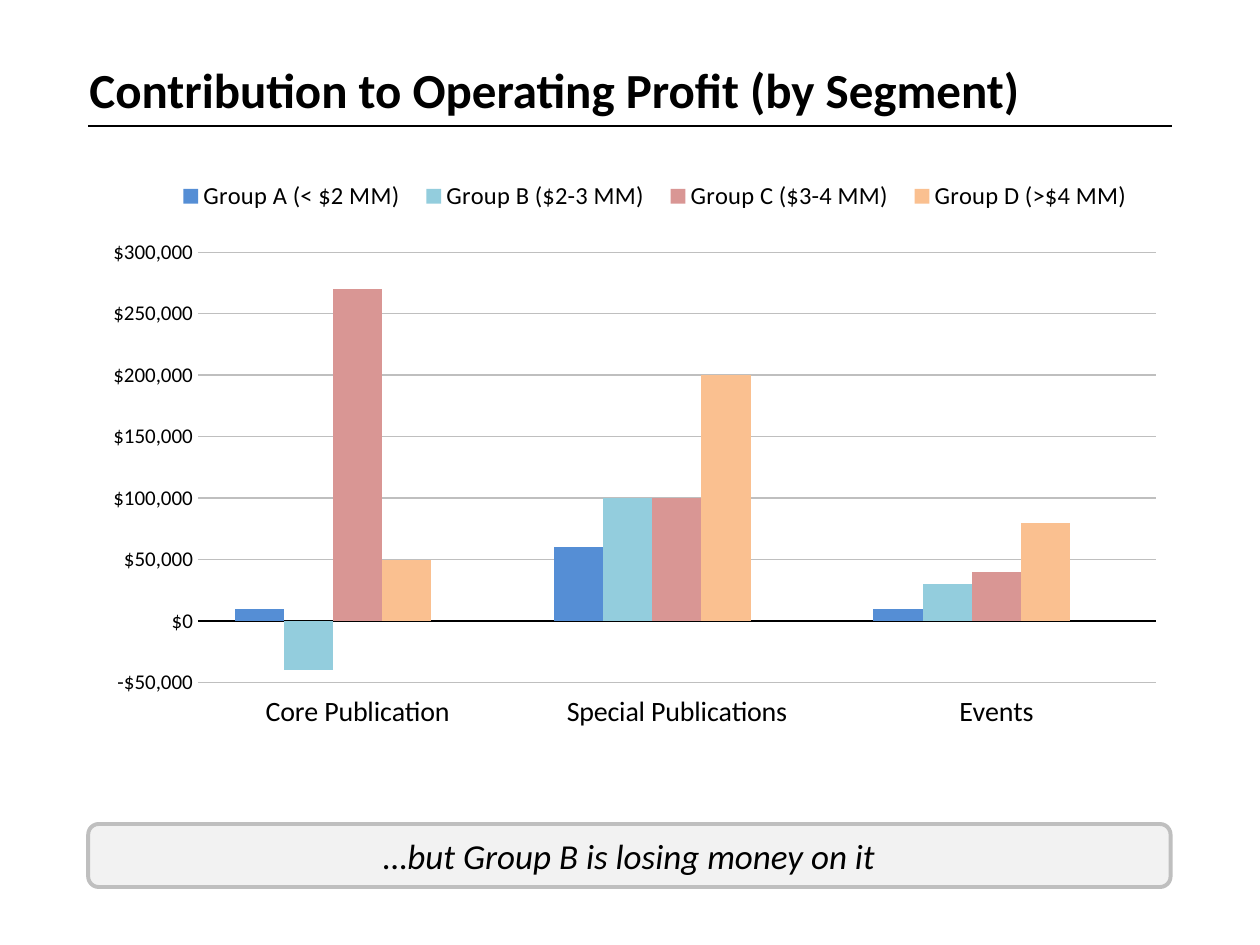
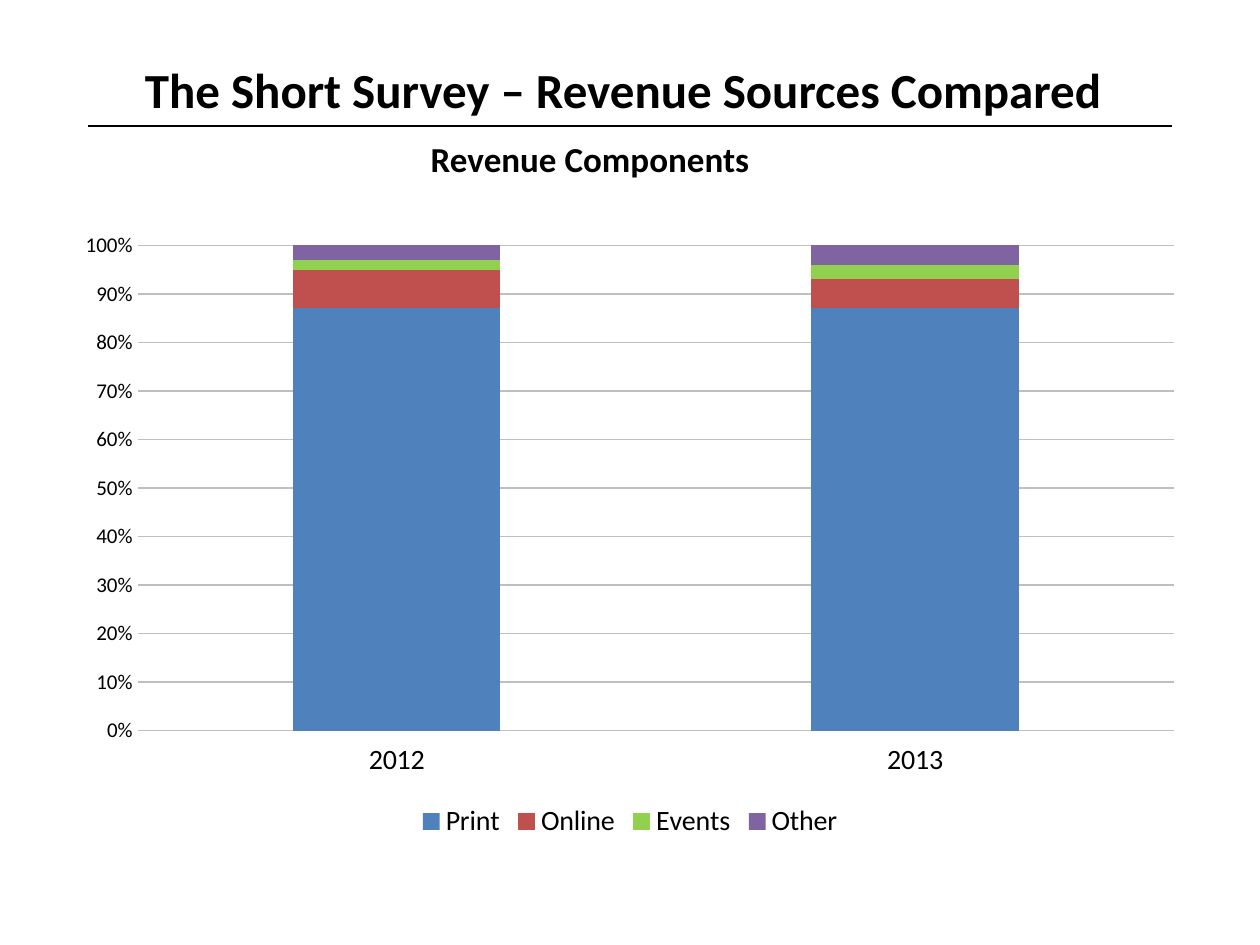
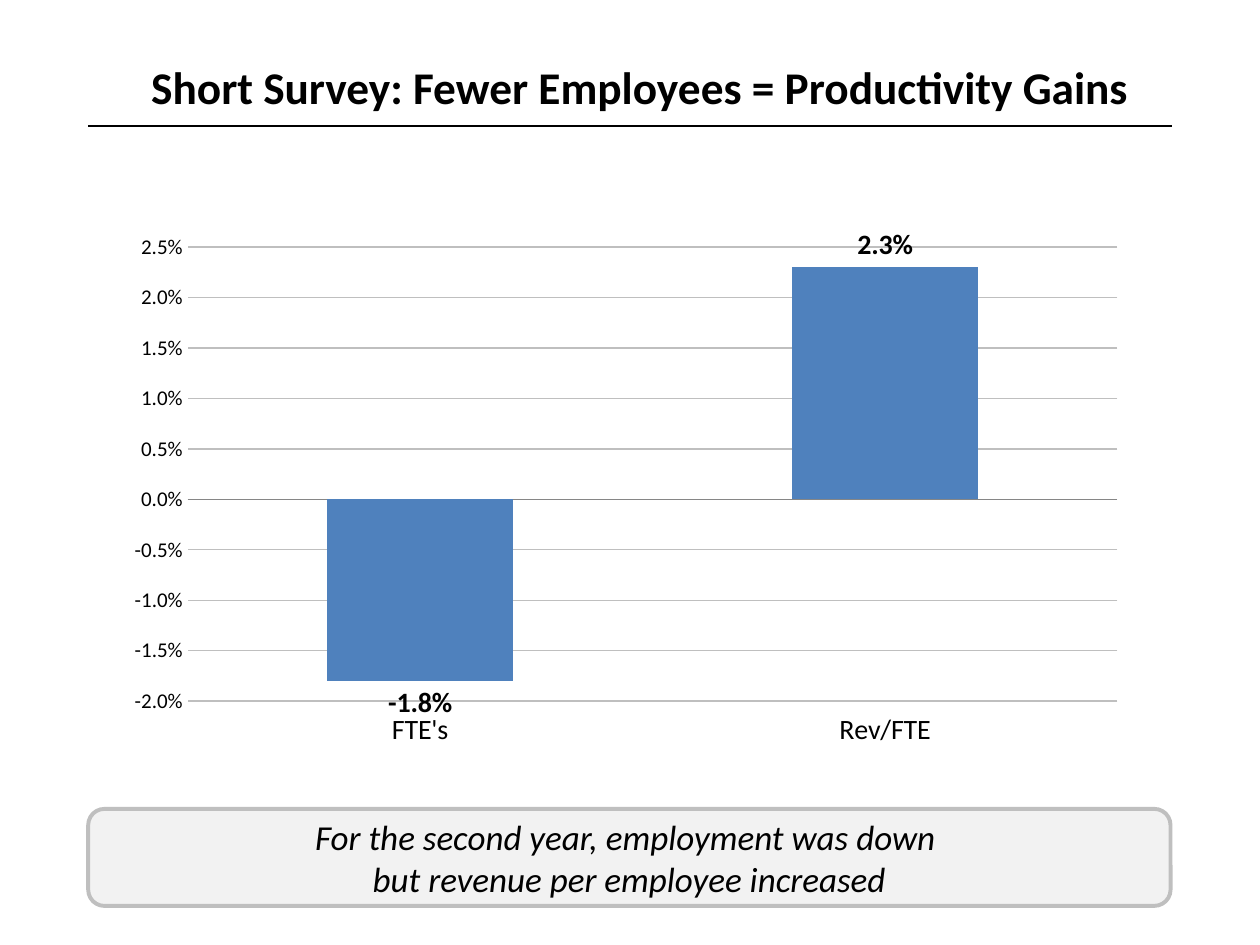
import lxml.etree
import pptx
import pptx.chart.data
import pptx.dml.color
import pptx.enum.chart
import pptx.enum.shapes
import pptx.enum.text
import pptx.oxml.ns
import pptx.util

Inches, Pt = pptx.util.Inches, pptx.util.Pt
KIND = pptx.enum.chart.XL_CHART_TYPE
TICK = pptx.enum.chart.XL_TICK_MARK
ALIGN = pptx.enum.text.PP_ALIGN
ANCHOR = pptx.enum.text.MSO_ANCHOR
qn = pptx.oxml.ns.qn

FONT, BLACK, GREY, PALE, BLUE = "Calibri", "000000", "BFBFBF", "F2F2F2", "4F81BD"


def rgb(code):
    return pptx.dml.color.RGBColor.from_string(code)


def apply(item, values):
    """Set each named attribute of item."""
    for name, value in values.items():
        setattr(item, name, value)


def ink(line, color, width):
    line.color.rgb = rgb(color)
    line.width = Pt(width)


def style(font, size, **more):
    apply(font, dict(name=FONT, size=Pt(size), **more))
    font.color.rgb = rgb(BLACK)


def place(parent, spot, box, inner=False):
    """Give a chart part a manual layout, in fractions of the chart."""
    for old in parent.findall(qn("c:layout")):
        parent.remove(old)
    layout = lxml.etree.Element(qn("c:layout"))
    manual = lxml.etree.SubElement(layout, qn("c:manualLayout"))
    rules = [("layoutTarget", "inner")] if inner else []
    rules += [("xMode", "edge"), ("yMode", "edge"), *zip("xywh", box)]
    for tag, value in rules:
        lxml.etree.SubElement(manual, qn("c:" + tag), val=str(value))
    parent.insert(spot, layout)


class Deck:
    """Holds the shared style and the current slide."""

    def __init__(self):
        self.show = pptx.Presentation()
        apply(self.show, dict(slide_width=Inches(10), slide_height=Inches(7.5)))

    def start(self, title, left, width, size=28):
        """Begin a slide with its title and the rule below it."""
        self.slide = self.show.slides.add_slide(self.show.slide_layouts[5])
        self.shapes = self.slide.shapes
        head = self.shapes.title
        apply(head, dict(left=Inches(left), top=Inches(0.42),
                         width=Inches(width), height=Inches(0.58)))
        self.fill_text(head, title, size, ALIGN.LEFT, ANCHOR.TOP, bold=True)
        rule = self.shapes.add_connector(
            pptx.enum.shapes.MSO_CONNECTOR.STRAIGHT,
            Inches(0.7), Inches(1), Inches(9.3), Inches(1))
        ink(rule.line, BLACK, 0.75)
        lxml.etree.SubElement(rule.element.spPr, qn("a:effectLst"))

    def fill_text(self, shape, text, size, align, anchor, **more):
        frame = shape.text_frame
        frame.text = text
        apply(frame, dict(word_wrap=True, vertical_anchor=anchor,
                          auto_size=pptx.enum.text.MSO_AUTO_SIZE.NONE))
        for para in frame.paragraphs:
            para.alignment = align
            for run in para.runs:
                style(run.font, size, **more)

    def label(self, text, box):
        shape = self.shapes.add_textbox(*map(Inches, box))
        self.fill_text(shape, text, 20, ALIGN.LEFT, ANCHOR.TOP, bold=True)

    def callout(self, text, top, height):
        shape = self.shapes.add_shape(
            pptx.enum.shapes.MSO_SHAPE.ROUNDED_RECTANGLE,
            Inches(0.7), Inches(top), Inches(8.59), Inches(height))
        shape.shadow.inherit = False
        shape.fill.solid()
        shape.fill.fore_color.rgb = rgb(PALE)
        ink(shape.line, GREY, 2.25)
        self.fill_text(shape, text, 20, ALIGN.CENTER, ANCHOR.MIDDLE, italic=True)

    def chart(self, kind, box, cats, series, form, scale, plot=None):
        """Add a column chart; each series is a name, values and colour."""
        data = pptx.chart.data.CategoryChartData()
        data.categories = cats
        for name, values, color in series:
            data.add_series(name, values)
        chart = self.shapes.add_chart(kind, *map(Inches, box), data).chart
        apply(chart, dict(has_title=False, has_legend=False))
        style(chart.font, 18)
        bars = chart.plots[0]
        apply(bars, dict(gap_width=150, vary_by_categories=False))
        for bar, (name, values, color) in zip(bars.series, series):
            bar.format.fill.solid()
            bar.format.fill.fore_color.rgb = rgb(color)
        for axis, size in ((chart.category_axis, 16), (chart.value_axis, 12)):
            apply(axis, dict(major_tick_mark=TICK.NONE, minor_tick_mark=TICK.NONE))
            style(axis.tick_labels.font, size)
        chart.category_axis.tick_label_position = pptx.enum.chart.XL_TICK_LABEL_POSITION.LOW
        axis = chart.value_axis
        low, high, step = scale
        apply(axis, dict(minimum_scale=low, maximum_scale=high, major_unit=step))
        apply(axis.tick_labels, dict(number_format=form, number_format_is_linked=False))
        axis.format.line.fill.background()
        ink(axis.major_gridlines.format.line, GREY, 0.75)
        if plot:
            place(next(chart.element.iter(qn("c:plotArea"))), 0, plot, True)
        return chart

    def legend(self, chart, size):
        """Add a legend and return its XML element."""
        chart.has_legend = True
        apply(chart.legend, dict(position=pptx.enum.chart.XL_LEGEND_POSITION.BOTTOM,
                                 include_in_layout=False))
        style(chart.legend.font, size)
        return next(chart.element.iter(qn("c:legend")))


def profit(deck):
    deck.start("Contribution to Operating Profit (by Segment)", 0.61, 8.5)
    groups = [
        ("Group A (< $2 MM)", (10000, 60000, 10000), "558ED5"),
        ("Group B ($2-3 MM)", (-40000, 100000, 30000), "93CDDD"),
        ("Group C ($3-4 MM)", (270000, 100000, 40000), "D99694"),
        ("Group D (>$4 MM)", (50000, 200000, 80000), "FAC090"),
        ("Series 5", (None, None, None), "4BACC6"),
    ]
    chart = deck.chart(KIND.COLUMN_CLUSTERED, (0.61, 1.3, 8.74, 4.68),
                       ("Core Publication", "Special Publications", "Events"),
                       groups, '"$"#,##0', (-50000, 300000, 50000),
                       (0.11, 0.15, 0.87, 0.73))
    ink(chart.category_axis.format.line, BLACK, 0.75)
    legend = deck.legend(chart, 14)
    entry = lxml.etree.Element(qn("c:legendEntry"))
    for tag, value in (("idx", len(groups) - 1), ("delete", 1)):
        lxml.etree.SubElement(entry, qn("c:" + tag), val=str(value))
    legend.insert(1, entry)
    place(legend, 2, (0.08, 0.02, 0.89, 0.07))
    deck.callout("…but Group B is losing money on it", 6.54, 0.5)


def revenue(deck):
    deck.start("The Short Survey – Revenue Sources Compared", 1.05, 8.07)
    parts = [
        ("Print", (87, 87), BLUE),
        ("Online", (8, 6), "C0504D"),
        ("Events", (2, 3), "92D050"),
        ("Other", (3, 4), "8064A2"),
    ]
    chart = deck.chart(KIND.COLUMN_STACKED_100, (0.5, 1.75, 9, 4.95),
                       ("2012", "2013"), parts, "0%", (0, 1, 0.1))
    chart.plots[0].overlap = 100
    chart.category_axis.format.line.fill.background()
    deck.legend(chart, 16)
    deck.label("Revenue Components", (3.32, 1.04, 2.81, 0.74))


def staff(deck):
    deck.start("Short Survey: Fewer Employees = Productivity Gains", 1.1, 8.02, 25.9)
    chart = deck.chart(KIND.COLUMN_CLUSTERED, (0.5, 1.75, 9, 5.3), ("FTE's", "Rev/FTE"),
                       [("Series 1", (-0.018, 0.023), BLUE)], "0.0%",
                       (-0.02, 0.025, 0.005), (0.11, 0.04, 0.82, 0.68))
    ink(chart.category_axis.format.line, "868686", 0.75)
    labels = chart.plots[0].series[0].data_labels
    apply(labels, dict(show_value=True, number_format="0.0%", number_format_is_linked=False,
                       position=pptx.enum.chart.XL_LABEL_POSITION.OUTSIDE_END))
    style(labels.font, 16, bold=True)
    deck.callout("For the second year, employment was down \n"
                 "but revenue per employee increased", 6.42, 0.77)


def main():
    deck = Deck()
    for build in (profit, revenue, staff):
        build(deck)
    deck.show.save("out.pptx")


if __name__ == "__main__":
    main()
